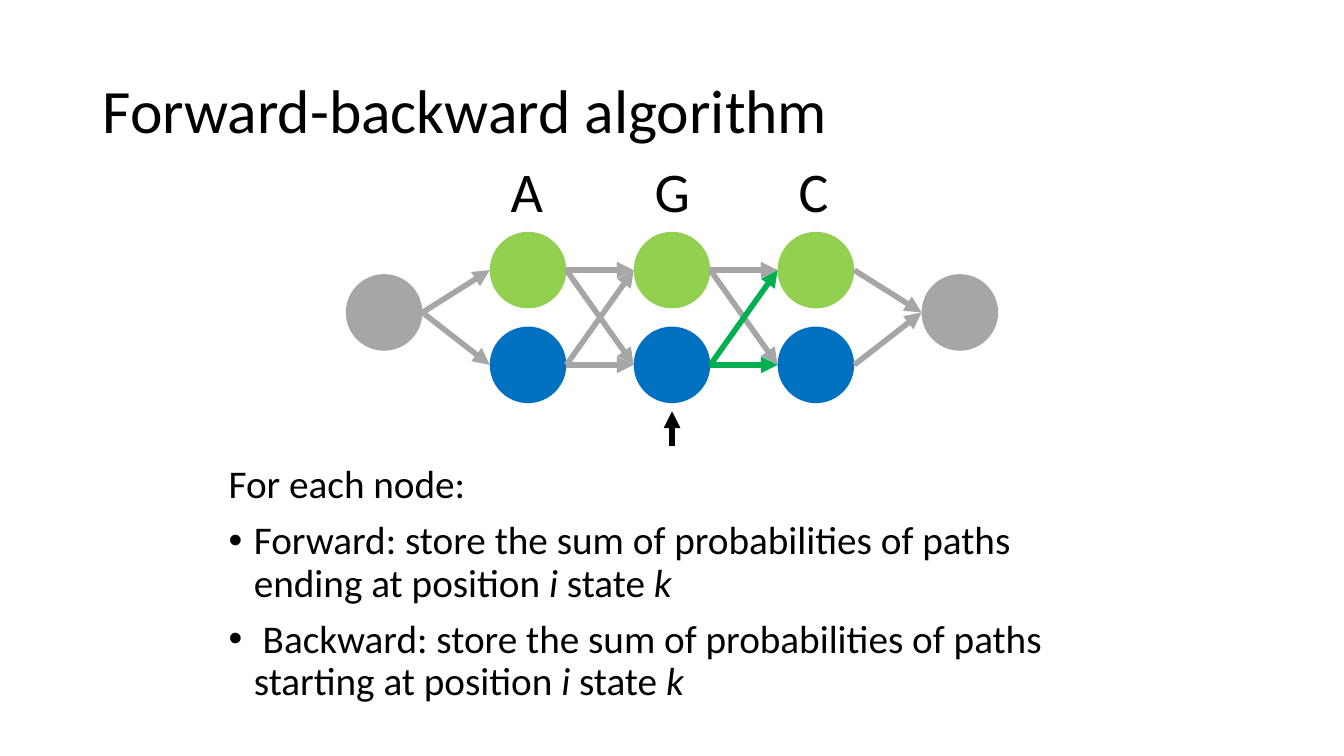
from dataclasses import dataclass
from itertools import product
from lxml import etree
from pptx import Presentation
from pptx.dml.color import RGBColor
from pptx.enum.shapes import MSO_CONNECTOR as CONN, MSO_SHAPE as SHAPE
from pptx.enum.text import MSO_ANCHOR as ANCHOR
from pptx.oxml.ns import qn
from pptx.util import Inches, Pt


@dataclass(frozen=True)
class Theme:
    font: str = "Calibri"
    title: int = 44
    letter: int = 40
    body: int = 28
    black: str = "000000"
    gray: str = "A6A6A6"
    lime: str = "92D050"
    blue: str = "0070C0"
    green: str = "00B050"
    line: int = 4


T = Theme()

TITLE = "Forward-backward algorithm"
LETTERS = "AGC"
BODY = [
    (False, [("For each node:", False)]),
    (True, [("Forward: store the sum of probabilities of paths ending at position ", False),
            ("i ", True), ("state ", False), ("k", True)]),
    (True, [(" Backward: store the sum of probabilities of paths starting at position ", False),
            ("i ", True), ("state ", False), ("k", True)]),
]
TRELLIS = [
    [("mid", T.gray)],
    *[[("top", T.lime), ("bottom", T.blue)] for _ in LETTERS],
    [("mid", T.gray)],
]
CURRENT = (2, "bottom")

WIDTH, HEIGHT = 13.33, 7.5
NODE = 0.76
FIRST_X, LAST_X = 3.43, 9.14
STEP = (LAST_X - FIRST_X) / (len(TRELLIS) - 1)
ROW_Y = {"top": 2.3, "mid": 2.72, "bottom": 3.24}

prs = Presentation()
prs.slide_width, prs.slide_height = Inches(WIDTH), Inches(HEIGHT)
slide = prs.slides.add_slide(prs.slide_layouts[6])


def column_x(col):
    return FIRST_X + col * STEP


def add_text(box, paragraphs, size, anchor=ANCHOR.TOP, spacing=1.0, before=0):
    tf = slide.shapes.add_textbox(*map(Inches, box)).text_frame
    tf.word_wrap = True
    tf.vertical_anchor = anchor
    for n, (bulleted, runs) in enumerate(paragraphs):
        p = tf.add_paragraph() if n else tf.paragraphs[0]
        p.line_spacing = spacing
        p.space_before = Pt(before)
        if bulleted:
            pPr = p._p.get_or_add_pPr()
            pPr.set("marL", str(Inches(0.25)))
            pPr.set("indent", str(Inches(-0.25)))
            etree.SubElement(pPr, qn("a:buFont")).set("typeface", "Arial")
            etree.SubElement(pPr, qn("a:buChar")).set("char", "•")
        for text, italic in runs:
            r = p.add_run()
            r.text = text
            r.font.name, r.font.size, r.font.italic = T.font, Pt(size), italic
            r.font.color.rgb = RGBColor.from_string(T.black)


def add_node(col, row, color):
    sp = slide.shapes.add_shape(
        SHAPE.OVAL, *map(Inches, (column_x(col), ROW_Y[row], NODE, NODE)))
    sp.shadow.inherit = False
    sp.fill.solid()
    sp.fill.fore_color.rgb = RGBColor.from_string(color)
    sp.line.fill.background()


def add_arrow(start, end, color):
    cx = slide.shapes.add_connector(CONN.STRAIGHT, *map(Inches, (*start, *end)))
    cx.line.width = Pt(T.line)
    cx.line.color.rgb = RGBColor.from_string(color)
    etree.SubElement(cx.line._get_or_add_ln(), qn("a:tailEnd")).set("type", "triangle")
    etree.SubElement(cx._element.spPr, qn("a:effectLst"))


add_text((0.92, 0.4, 11.5, 1.45), [(False, [(TITLE, False)])], T.title, ANCHOR.MIDDLE, 0.9)
add_text((2.17, 4.56, 9, 2.61), BODY, T.body, spacing=0.9, before=10)

for col, nodes in enumerate(TRELLIS):
    for row, color in nodes:
        add_node(col, row, color)

for col, letter in enumerate(LETTERS, 1):
    add_text((column_x(col) + 0.11, 1.5, 0.36, 0.77), [(False, [(letter, False)])], T.letter)

edges = [(col, a, b) for col in range(len(TRELLIS) - 1)
         for (a, _), (b, _) in product(TRELLIS[col], TRELLIS[col + 1])]
for col, a, b in sorted(edges, key=lambda e: e[:2] == CURRENT):
    add_arrow((column_x(col) + NODE, ROW_Y[a] + NODE / 2),
              (column_x(col + 1), ROW_Y[b] + NODE / 2),
              T.green if (col, a) == CURRENT else T.gray)

pointer_x = column_x(CURRENT[0]) + NODE / 2
pointer_y = ROW_Y[CURRENT[1]] + NODE + 0.08
add_arrow((pointer_x, pointer_y + 0.34), (pointer_x, pointer_y), T.black)

prs.save("out.pptx")
